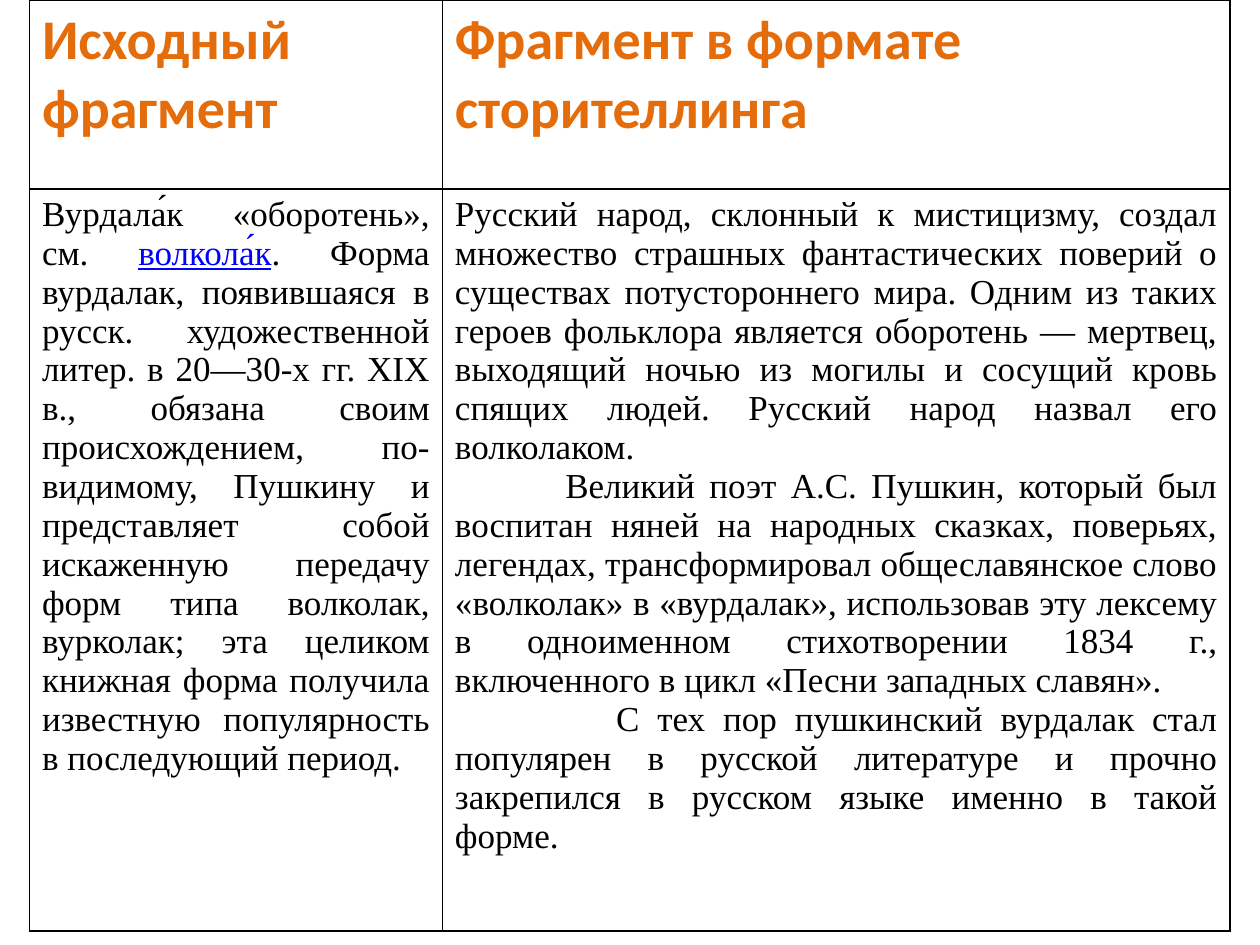
from dataclasses import dataclass

from lxml.etree import SubElement
from pptx import Presentation
from pptx.dml.color import RGBColor as RGB
from pptx.enum.text import PP_ALIGN as Align
from pptx.oxml.ns import qn
from pptx.util import Pt


@dataclass(frozen=True)
class Theme:
    heading_font: str = "Calibri"
    body_font: str = "Times New Roman"
    heading_size: int = 32
    body_size: int = 20
    border_width: int = 1
    heading: RGB = RGB(0xE4, 0x6C, 0x0A)
    text: RGB = RGB(0, 0, 0)
    term: RGB = RGB(0, 0, 0xFF)
    border: RGB = RGB(0, 0, 0)


@dataclass(frozen=True)
class Run:
    text: str
    is_term: bool = False


@dataclass(frozen=True)
class Para:
    runs: tuple[Run, ...]
    indent: float = 0


@dataclass(frozen=True)
class Column:
    width: float
    heading: str
    paras: tuple[Para, ...]


THEME = Theme()
LEFT, TOP = 16.8, 0
ROW_HEIGHTS = (108, 424)

COLUMNS = (
    Column(236, "Исходный фрагмент", (
        Para((
            Run("Вурдала́к «оборотень», см. "),
            Run("волкола́к", is_term=True),
            Run(". Форма вурдалак, появившаяся в русск. художественной литер. "
                "в 20—30-х гг. XIX в., обязана своим происхождением, "
                "по-видимому, Пушкину и представляет собой искаженную "
                "передачу форм типа волколак, вурколак; эта целиком "
                "книжная форма получила известную популярность "
                "в последующий период."),
        )),
    )),
    Column(450, "Фрагмент в формате сторителлинга", (
        Para((Run(
            "Русский народ, склонный к мистицизму, создал множество страшных "
            "фантастических поверий о существах потустороннего мира. Одним из "
            "таких героев фольклора является оборотень — мертвец, выходящий "
            "ночью из могилы и сосущий кровь спящих людей. Русский народ "
            "назвал его волколаком."),)),
        Para((Run(
            "Великий поэт А.С. Пушкин, который был воспитан няней на народных "
            "сказках, поверьях, легендах, трансформировал общеславянское слово "
            "«волколак» в «вурдалак», использовав эту лексему в одноименном "
            "стихотворении 1834 г., включенного в цикл «Песни западных "
            "славян»."),), indent=63),
        Para((Run(
            "С тех пор пушкинский вурдалак стал популярен в русской "
            "литературе и прочно закрепился в русском языке именно в такой "
            "форме."),), indent=92),
    )),
)


def style_cell(cell) -> None:
    """Draw the four borders and leave the cell without a fill."""
    tc_pr = cell._tc.get_or_add_tcPr()
    for side in ("a:lnL", "a:lnR", "a:lnT", "a:lnB"):
        ln = SubElement(tc_pr, qn(side), w=str(Pt(THEME.border_width)))
        fill = SubElement(ln, qn("a:solidFill"))
        SubElement(fill, qn("a:srgbClr"), val=str(THEME.border))
    cell.fill.background()


def format_run(r, font: str, size: int, color: RGB, bold: bool = False) -> None:
    r.font.name = font
    r.font.size = Pt(size)
    r.font.bold = bold
    r.font.color.rgb = color


def write_heading(cell, text: str) -> None:
    cell.text_frame.text = text
    format_run(cell.text_frame.paragraphs[0].runs[0], THEME.heading_font,
               THEME.heading_size, THEME.heading, bold=True)


def write_body(cell, paras: tuple[Para, ...]) -> None:
    tf = cell.text_frame
    for i, para in enumerate(paras):
        p = tf.add_paragraph() if i else tf.paragraphs[0]
        p.alignment = Align.JUSTIFY
        if para.indent:
            p._p.get_or_add_pPr().set("indent", str(Pt(para.indent)))
        for run in para.runs:
            r = p.add_run()
            r.text = run.text
            format_run(r, THEME.body_font, THEME.body_size,
                       THEME.term if run.is_term else THEME.text)
            r.font.underline = run.is_term


def add_comparison(slide, columns: tuple[Column, ...]) -> None:
    width = sum(column.width for column in columns)
    table = slide.shapes.add_table(
        len(ROW_HEIGHTS), len(columns), Pt(LEFT), Pt(TOP),
        Pt(width), Pt(sum(ROW_HEIGHTS))).table
    table.horz_banding = False
    for row, height in zip(table.rows, ROW_HEIGHTS):
        row.height = Pt(height)
    for i, column in enumerate(columns):
        table.columns[i].width = Pt(column.width)
        write_heading(table.cell(0, i), column.heading)
        write_body(table.cell(1, i), column.paras)
    for cell in table.iter_cells():
        style_cell(cell)


def main() -> None:
    prs = Presentation()
    prs.slide_width, prs.slide_height = Pt(720), Pt(540)
    slide = prs.slides.add_slide(prs.slide_layouts[6])
    add_comparison(slide, COLUMNS)
    prs.save("out.pptx")


if __name__ == "__main__":
    main()
